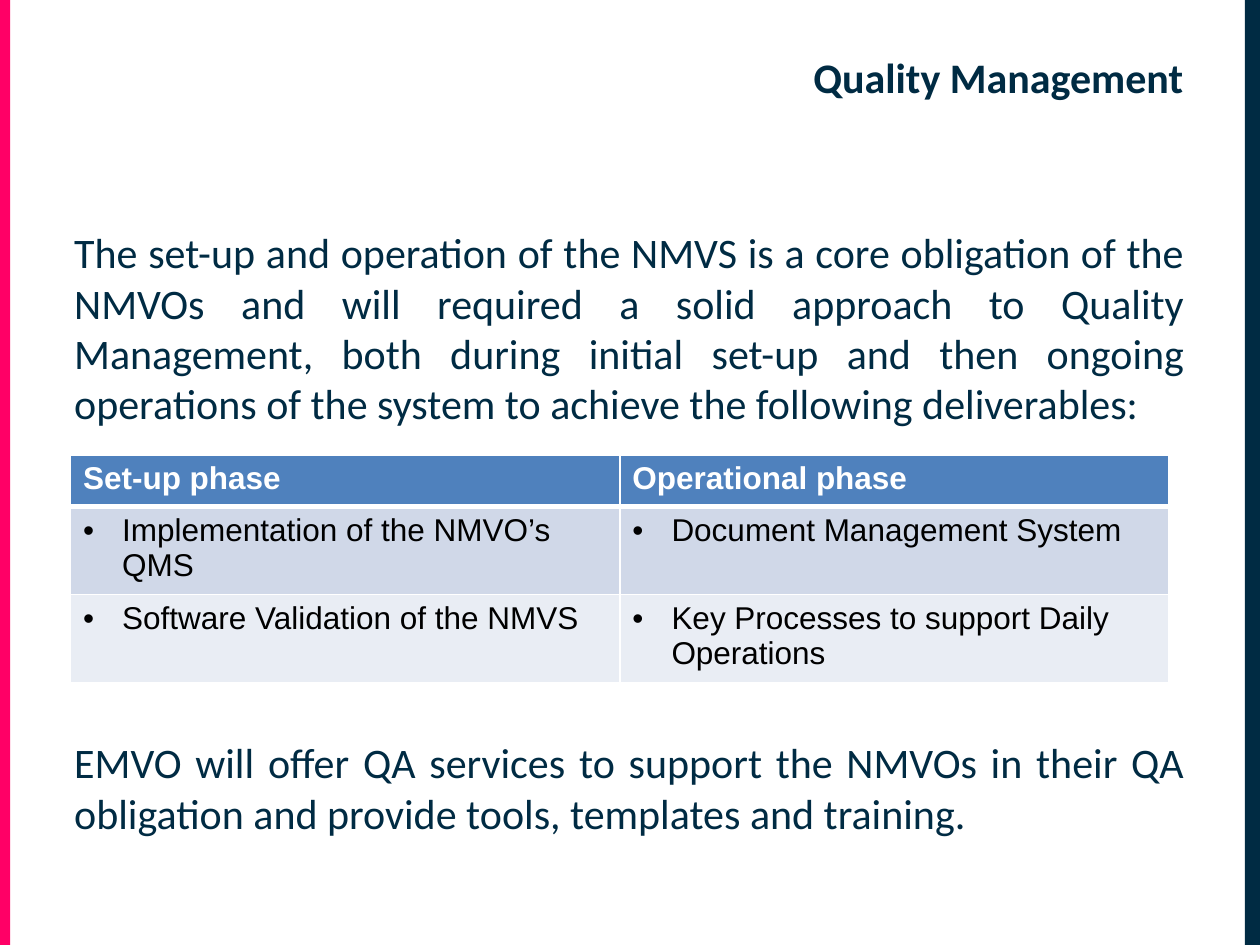
"""Build the Quality Management slide with its table of deliverables."""
from lxml.etree import SubElement as Sub
from pptx import Presentation
from pptx.dml.color import RGBColor as RGB
from pptx.enum.shapes import MSO_SHAPE as Shape
from pptx.enum.text import MSO_ANCHOR as Anchor, PP_ALIGN as Align
from pptx.oxml.ns import qn
from pptx.util import Inches, Pt

NAVY = "002B43"
PINK = "FF0066"
WHITE = "FFFFFF"


def paint(obj, color):
    obj.solid()
    obj.fore_color.rgb = RGB.from_string(color)


def write(para, text, font, size, color, bold=False):
    run = para.add_run()
    run.text = text
    run.font.name = font
    run.font.size = Pt(size)
    run.font.bold = bold
    paint(run.font.fill, color)


deck = Presentation()
deck.slide_width = Inches(10)
deck.slide_height = Inches(7.5)
slide = deck.slides.add_slide(deck.slide_layouts[6])
shapes = slide.shapes

for left, width, color in [(0, 0.08, PINK), (9.88, 0.12, NAVY)]:
    bar = shapes.add_shape(
        Shape.RECTANGLE, Inches(left), 0, Inches(width), deck.slide_height
    )
    bar.shadow.inherit = False
    paint(bar.fill, color)
    bar.line.fill.background()

title = shapes.add_textbox(
    Inches(3.9), Inches(0.29), Inches(5.59), Inches(0.63)
).text_frame
title.word_wrap = True
title.vertical_anchor = Anchor.MIDDLE
para = title.paragraphs[0]
para.alignment = Align.RIGHT
write(para, "Quality Management", "Calibri", 24, NAVY, True)

body = shapes.add_textbox(
    Inches(0.49), Inches(1.75), Inches(9.01), Inches(4.76)
).text_frame
body.word_wrap = True
intro = body.paragraphs[0]
close = body.add_paragraph()
close.space_before = Inches(2.45)
texts = [
    "The set-up and operation of the NMVS is a core obligation of the NMVOs "
    "and will required a solid approach to Quality Management, both during "
    "initial set-up and then ongoing operations of the system to achieve "
    "the following deliverables:",
    "EMVO will offer QA services to support the NMVOs in their QA obligation "
    "and provide tools, templates and training.",
]
for para, text in zip([intro, close], texts):
    para.alignment = Align.JUSTIFY
    write(para, text, "Calibri", 24, NAVY)

rows = [
    ("4F81BD", 0.41, ["Set-up phase", "Operational phase"]),
    ("D0D8E8", 0.66, ["Implementation of the NMVO’s QMS",
                      "Document Management System"]),
    ("E9EDF4", 0.66, ["Software Validation of the NMVS",
                      "Key Processes to support Daily Operations"]),
]
table = shapes.add_table(
    len(rows), 2, Inches(0.56), Inches(3.61), Inches(8.72), Inches(1.73)
).table
for r, (color, height, texts) in enumerate(rows):
    table.rows[r].height = Inches(height)
    for c, text in enumerate(texts):
        cell = table.cell(r, c)
        props = cell._tc.get_or_add_tcPr()
        for side in "LRTB":
            thick = (r, side) in [(0, "B"), (1, "T")]
            edge = Sub(props, qn(f"a:ln{side}"), w=str(Pt(3 if thick else 1)))
            Sub(Sub(edge, qn("a:solidFill")), qn("a:srgbClr"), val=WHITE)
        paint(cell.fill, color)
        para = cell.text_frame.paragraphs[0]
        if r:
            form = para._p.get_or_add_pPr()
            form.set("marL", str(Inches(0.31)))
            form.set("indent", str(Inches(-0.31)))
            Sub(form, qn("a:buFont"), typeface="Arial")
            Sub(form, qn("a:buChar"), char="•")
        write(para, text, "Arial", 18, "000000" if r else WHITE, r == 0)

deck.save("out.pptx")
